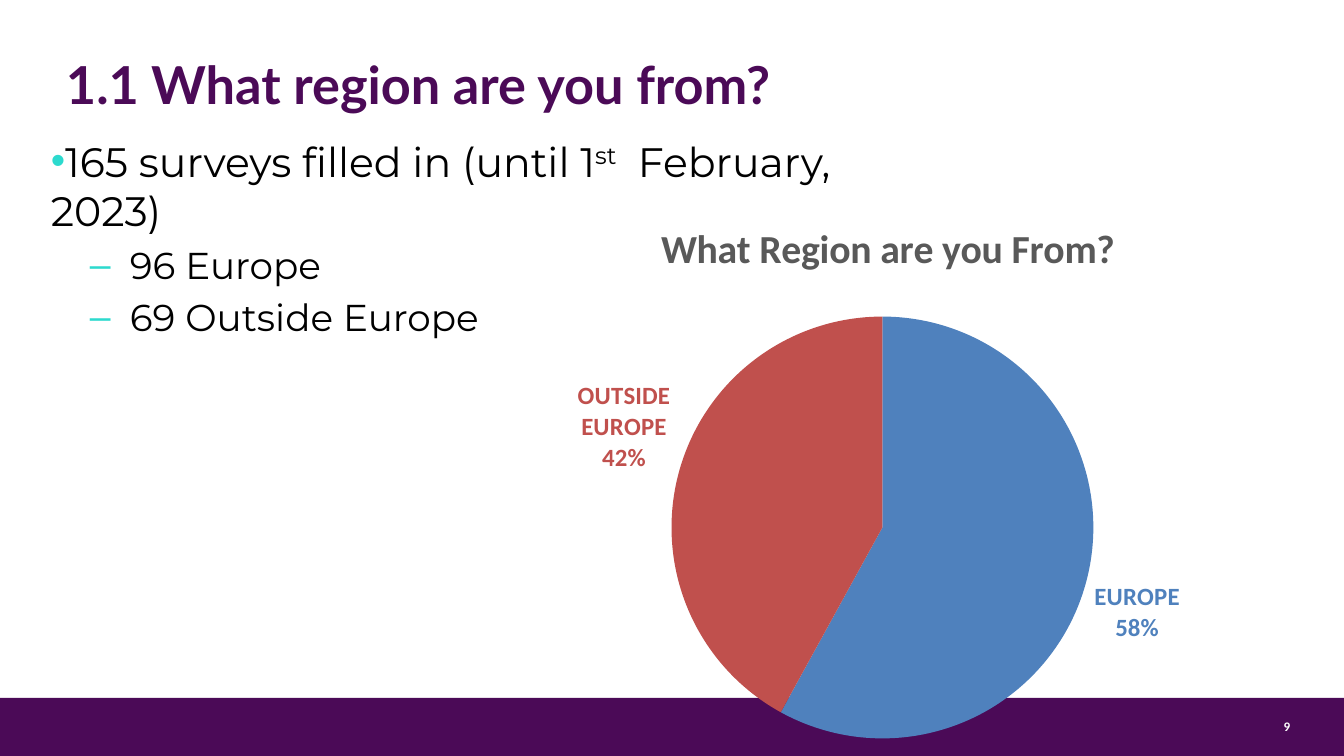
from lxml import etree
from pptx import Presentation
from pptx.chart.data import CategoryChartData
from pptx.dml.color import RGBColor
from pptx.enum.chart import XL_CHART_TYPE, XL_LABEL_POSITION
from pptx.enum.shapes import MSO_SHAPE
from pptx.enum.text import MSO_ANCHOR, PP_ALIGN
from pptx.oxml import parse_xml
from pptx.oxml.ns import nsdecls, qn
from pptx.util import Pt

PIE = XL_CHART_TYPE.PIE
OUTSIDE_END = XL_LABEL_POSITION.OUTSIDE_END
RECTANGLE = MSO_SHAPE.RECTANGLE
TOP, MIDDLE = MSO_ANCHOR.TOP, MSO_ANCHOR.MIDDLE
LEFT, CENTER = PP_ALIGN.LEFT, PP_ALIGN.CENTER

EMU_PER_PX = 914400 / 134.4
PURPLE, TURQUOISE, WHITE, BLACK, GRAY = "4B0A57", "2CDACE", "FFFFFF", "000000", "595959"
REGIONS = [("EUROPE", 58, "4F81BD"), ("OUTSIDE EUROPE", 42, "C0504D")]


def px(length):
    """Turn pixels into EMU."""
    return round(length * EMU_PER_PX)


def color(value):
    """Turn a hex string into a colour."""
    return RGBColor.from_string(value)


def style_font(font, name, size, fill, bold=False):
    """Set the face, size, colour and weight of a font."""
    font.name, font.size, font.bold = name, Pt(size), bold
    font.color.rgb = color(fill)


def add_run(paragraph, text, *style, superscript=False):
    """Add one styled run."""
    run = paragraph.add_run()
    run.text = text
    style_font(run.font, *style)
    if superscript:
        run._r.get_or_add_rPr().set("baseline", "30000")


def add_text_box(slide, box, side_inset=0, anchor=TOP):
    """Add an empty wrapping text box and return its text frame."""
    frame = slide.shapes.add_textbox(*map(px, box)).text_frame
    frame.word_wrap = True
    frame.vertical_anchor = anchor
    frame.margin_left = frame.margin_right = px(side_inset)
    frame.margin_top = frame.margin_bottom = px(7)
    return frame


def add_line(slide, box, text, style, alignment=LEFT, spacing=None):
    """Add a text box holding a single line."""
    paragraph = add_text_box(slide, box, anchor=MIDDLE).paragraphs[0]
    paragraph.alignment = alignment
    if spacing:
        paragraph.line_spacing = Pt(spacing)
    add_run(paragraph, text, *style)


def add_bullet(paragraph, character, margin, indent):
    """Give a paragraph a coloured bullet and a hanging indent."""
    properties = paragraph._p.get_or_add_pPr()
    properties.set("marL", str(px(margin)))
    properties.set("indent", str(px(indent)))
    bullet_color = etree.SubElement(properties, qn("a:buClr"))
    etree.SubElement(bullet_color, qn("a:srgbClr"), val=TURQUOISE)
    etree.SubElement(properties, qn("a:buFont"), typeface="Arial")
    etree.SubElement(properties, qn("a:buChar"), char=character)


def add_survey_list(slide):
    """Add the survey count with its regional breakdown."""
    frame = add_text_box(slide, (38, 129, 852, 106), side_inset=13)
    total = frame.paragraphs[0]
    add_bullet(total, "•", 0, -27)
    style = ("Montserrat", 22, BLACK)
    add_run(total, "165 surveys filled in (until 1", *style)
    add_run(total, "st", *style, superscript=True)
    add_run(total, "  February, 2023)", *style)
    for text in ("96 Europe", "69 Outside Europe"):
        paragraph = frame.add_paragraph()
        paragraph.level = 1
        add_bullet(paragraph, "–", 79, -40)
        paragraph.space_before = Pt(4)
        add_run(paragraph, text, "Montserrat", 20, BLACK)


def manual_layout(target=None, **fractions):
    """Build a chart layout element from fractions of the chart's size."""
    layout = parse_xml(f"<c:layout {nsdecls('c')}><c:manualLayout/></c:layout>")
    settings = {"layoutTarget": target} if target else {}
    settings |= {"xMode": "edge", "yMode": "edge", **fractions}
    for name, value in settings.items():
        etree.SubElement(layout[0], qn(f"c:{name}"), val=str(value))
    return layout


def replace_layout(parent, layout, index):
    """Put a layout into a chart part in place of any present one."""
    for present in parent.findall(qn("c:layout")):
        parent.remove(present)
    parent.insert(index, layout)


def show_category_and_percent(chart):
    """Make every slice label show its category above its percentage."""
    shown = {"showVal": "0", "showCatName": "1", "showPercent": "1"}
    for label in chart.element.iter(qn("c:dLbl")):
        for name, value in shown.items():
            label.find(qn(f"c:{name}")).set("val", value)
        etree.SubElement(label, qn("c:separator")).text = "\n"


def add_region_chart(slide):
    """Add the pie chart of respondents by region."""
    data = CategoryChartData()
    data.categories = [name for name, _, _ in REGIONS]
    data.add_series("Series 1", [share for _, share, _ in REGIONS])
    chart = slide.shapes.add_chart(PIE, *map(px, (443, 185, 879, 571)), data).chart
    style_font(chart.font, "Calibri", 10, BLACK)
    chart.has_legend = False
    chart.has_title = True
    title = chart.chart_title
    title.include_in_layout = False
    add_run(title.text_frame.paragraphs[0], "What Region are you From?",
            "Calibri", 21.3, GRAY, True)
    replace_layout(title._element, manual_layout(x=0.24, y=0.05), 1)

    plot = chart.plots[0]
    plot.vary_by_categories = True
    for index, (_, _, fill) in enumerate(REGIONS):
        point = plot.series[0].points[index]
        point.format.fill.solid()
        point.format.fill.fore_color.rgb = color(fill)
        style_font(point.data_label.font, "Calibri", 13.3, fill, True)
        point.data_label.position = OUTSIDE_END
    show_category_and_percent(chart)
    plot_area = chart.element.find(".//" + qn("c:plotArea"))
    replace_layout(plot_area, manual_layout("inner", x=0.26, y=0.23, w=0.48, h=0.74), 0)


def add_footer_band(slide):
    """Add the coloured band along the bottom edge."""
    band = slide.shapes.add_shape(RECTANGLE, *map(px, (0, 698, 1344, 58)))
    band.shadow.inherit = False
    band.fill.solid()
    band.fill.fore_color.rgb = color(PURPLE)
    band.line.fill.background()


def main():
    """Build and save the slide."""
    presentation = Presentation()
    presentation.slide_width, presentation.slide_height = px(1344), px(756)
    slide = presentation.slides.add_slide(presentation.slide_layouts[6])
    add_footer_band(slide)
    add_line(slide, (1275, 711, 24, 31), "9", ("Calibri", 7, WHITE, True), CENTER)
    add_line(slide, (66, 47, 1232, 73), "1.1 What region are you from?",
             ("Lato", 28, PURPLE, True), spacing=34)
    add_region_chart(slide)
    add_survey_list(slide)
    presentation.save("out.pptx")


if __name__ == "__main__":
    main()
